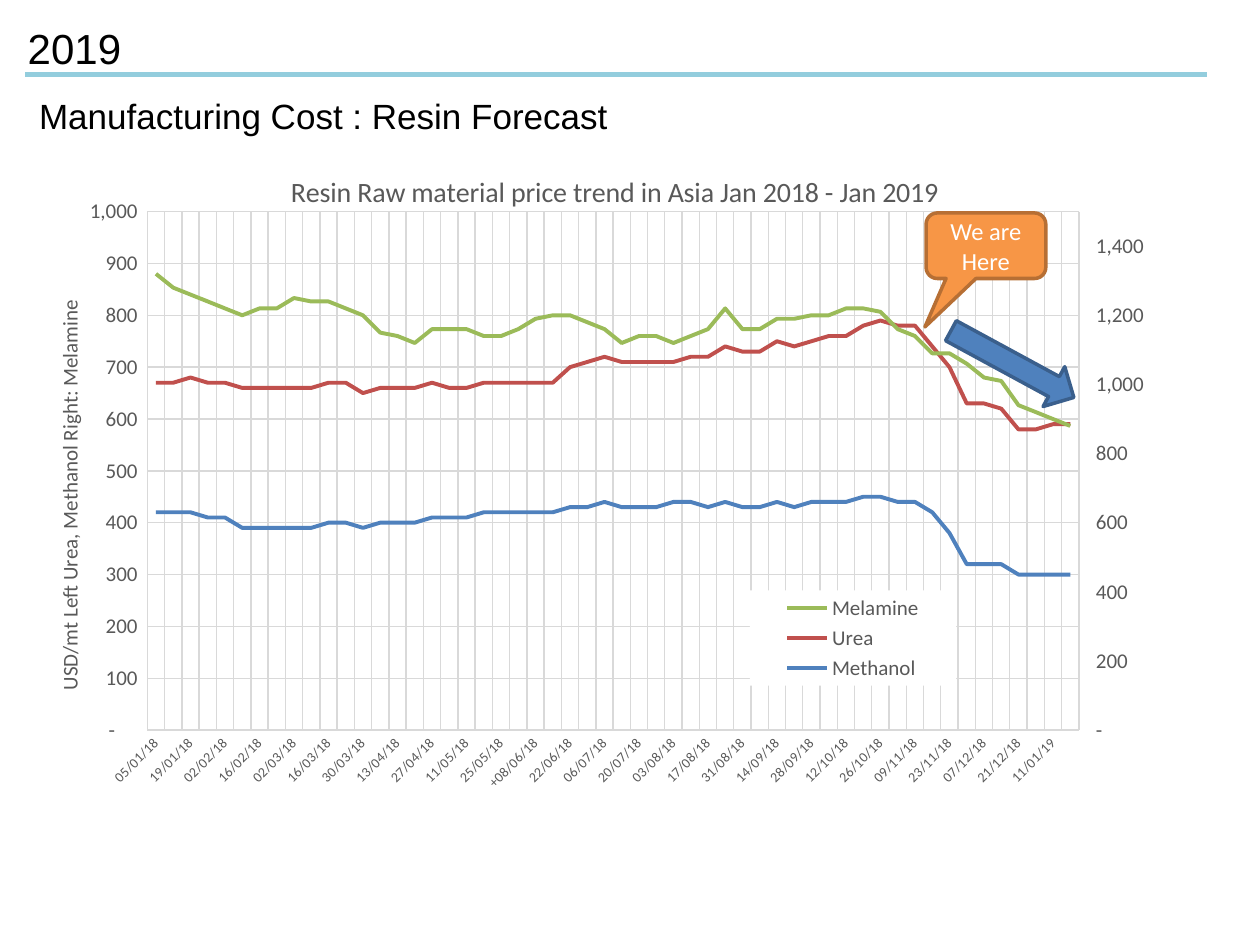
import copy
from dataclasses import dataclass

import lxml.etree
import pptx
import pptx.chart.axis
import pptx.chart.data
import pptx.dml.color
import pptx.enum.chart
import pptx.enum.shapes
import pptx.enum.text
import pptx.oxml
import pptx.oxml.ns
import pptx.util
from pptx.util import Inches

COLORS = {
    "rule": "93CDDD", "black": "000000", "white": "FFFFFF", "label": "595959",
    "grid": "D9D9D9", "blue": "4F81BD", "red": "C0504D", "green": "9BBB59",
    "arrow edge": "3A5F8C", "orange": "F79646", "callout edge": "B76F34",
}
PRICE_FORMAT = r'_(* #,##0_);_(* \(#,##0\);_(* "-"??_);_('
CHART_NS = pptx.oxml.ns.nsdecls("c", "a")
qn = pptx.oxml.ns.qn

WEEKS = """05/01/18 12/01/18 19/01/18 26/01/18 02/02/18 09/02/18 16/02/18 23/02/18 02/03/18
09/03/18 16/03/18 23/03/18 30/03/18 06/04/18 13/04/18 20/04/18 27/04/18 04/05/18 11/05/18
18/05/18 25/05/18 01/06/18 +08/06/18 15/06/18 22/06/18 29/06/18 06/07/18 13/07/18 20/07/18
27/07/18 03/08/18 10/08/18 17/08/18 24/08/18 31/08/18 07/09/18 14/09/18 21/09/18 28/09/18
05/10/18 12/10/18 19/10/18 26/10/18 02/11/18 09/11/18 16/11/18 23/11/18 30/11/18 07/12/18
14/12/18 21/12/18 04/01/19 11/01/19 18/01/19""".split()


@dataclass
class Resin:
    name: str
    color: str
    prices: list[int]


@dataclass
class Heading:
    text: str
    left: float
    top: float
    size: int


# Urea is stacked on methanol, so its prices are the amount above methanol.
RESINS = [
    Resin("Methanol", "blue", [
        420, 420, 420, 410, 410, 390, 390, 390, 390, 390, 400, 400, 390, 400, 400, 400, 410, 410,
        410, 420, 420, 420, 420, 420, 430, 430, 440, 430, 430, 430, 440, 440, 430, 440, 430, 430,
        440, 430, 440, 440, 440, 450, 450, 440, 440, 420, 380, 320, 320, 320, 300, 300, 300, 300]),
    Resin("Urea", "red", [
        250, 250, 260, 260, 260, 270, 270, 270, 270, 270, 270, 270, 260, 260, 260, 260, 260, 250,
        250, 250, 250, 250, 250, 250, 270, 280, 280, 280, 280, 280, 270, 280, 290, 300, 300, 300,
        310, 310, 310, 320, 320, 330, 340, 340, 340, 320, 320, 310, 310, 300, 280, 280, 290, 290]),
    Resin("Melamine", "green", [
        1320, 1280, 1260, 1240, 1220, 1200, 1220, 1220, 1250, 1240, 1240, 1220, 1200, 1150, 1140,
        1120, 1160, 1160, 1160, 1140, 1140, 1160, 1190, 1200, 1200, 1180, 1160, 1120, 1140, 1140,
        1120, 1140, 1160, 1220, 1160, 1160, 1190, 1190, 1200, 1200, 1220, 1220, 1210, 1160, 1140,
        1090, 1090, 1060, 1020, 1010, 940, 920, 900, 880]),
]
HEADINGS = [
    Heading("2019", 0.22, 0.11, 24),
    Heading("Manufacturing Cost : Resin Forecast", 0.31, 0.61, 20),
]


def rgb(color: str):
    return pptx.dml.color.RGBColor.from_string(COLORS[color])


def style_font(font, size: int, color: str, name: str = "Calibri") -> None:
    font.name, font.size, font.bold = name, pptx.util.Pt(size), False
    font.color.rgb = rgb(color)


def style_line(line, color: str, width: float) -> None:
    line.color.rgb = rgb(color)
    line.width = pptx.util.Pt(width)


def add_heading(slide, heading: Heading) -> None:
    box = slide.shapes.add_textbox(
        Inches(heading.left), Inches(heading.top), Inches(6.42), Inches(0.47))
    frame = box.text_frame
    frame.margin_left = frame.margin_top = frame.margin_right = frame.margin_bottom = 0
    frame.vertical_anchor = pptx.enum.text.MSO_ANCHOR.BOTTOM
    frame.word_wrap = True
    frame.text = heading.text
    style_font(frame.paragraphs[0].font, heading.size, "black", "Arial")


def add_marker(slide, kind, left, top, width, height, fill: str, edge: str):
    marker = slide.shapes.add_shape(kind, Inches(left), Inches(top), Inches(width), Inches(height))
    marker.shadow.inherit = False
    marker.fill.solid()
    marker.fill.fore_color.rgb = rgb(fill)
    style_line(marker.line, edge, 2)
    return marker


def set_layout(element, index: int, **fractions: float) -> None:
    """Place a chart part by fractions of the chart; index is the layout's child position."""
    for old in element.findall(qn("c:layout")):
        element.remove(old)
    modes = {"xMode": "edge", "yMode": "edge"}
    if element.tag == qn("c:plotArea"):
        modes = {"layoutTarget": "inner", **modes}
    settings = "".join(f'<c:{key} val="{val}"/>' for key, val in {**modes, **fractions}.items())
    element.insert(index, pptx.oxml.parse_xml(
        f"<c:layout {CHART_NS}><c:manualLayout>{settings}</c:manualLayout></c:layout>"))


def write_title(titled, text: str, size: int, x: float, y: float) -> None:
    titled.text_frame.text = text
    style_font(titled.text_frame.paragraphs[0].font, size, "label")
    set_layout(titled._element, 1, x=x, y=y)


def style_axis(axis, size: int) -> None:
    axis.major_tick_mark = axis.minor_tick_mark = pptx.enum.chart.XL_TICK_MARK.NONE
    style_font(axis.tick_labels.font, size, "label")
    axis.has_major_gridlines = True
    style_line(axis.major_gridlines.format.line, "grid", 0.75)


def move_last_series_right(chart) -> None:
    """Give the last series its own line group with a value axis on the right."""
    plot_area = chart._chartSpace.chart.plotArea
    left_group = plot_area.find(qn("c:lineChart"))
    right_group = copy.deepcopy(left_group)
    left_series = left_group.findall(qn("c:ser"))
    left_group.remove(left_series[-1])
    for series in right_group.findall(qn("c:ser"))[:-1]:
        right_group.remove(series)
    left_group.addnext(right_group)

    category = copy.deepcopy(chart.category_axis._element)
    price = copy.deepcopy(chart.value_axis._element)
    for element, own, other in ((category, "5001", "5002"), (price, "5002", "5001")):
        element.find(qn("c:axId")).set("val", own)
        element.find(qn("c:crossAx")).set("val", other)
    for reference, axis_id in zip(right_group.findall(qn("c:axId")), ("5001", "5002")):
        reference.set("val", axis_id)
    chart.value_axis._element.addnext(price)
    price.addnext(category)

    hidden_axis = pptx.chart.axis.CategoryAxis(category)
    hidden_axis.has_major_gridlines = False
    hidden_axis.visible = False
    right_axis = pptx.chart.axis.ValueAxis(price)
    right_axis.has_major_gridlines = right_axis.has_title = False
    right_axis.major_tick_mark = pptx.enum.chart.XL_TICK_MARK.OUTSIDE
    right_axis.maximum_scale, right_axis.major_unit = 1500, 200
    price.find(qn("c:axPos")).set("val", "r")
    price.find(qn("c:crosses")).set("val", "max")


def add_legend(chart) -> None:
    chart.has_legend = True
    legend = chart.legend
    legend.position = pptx.enum.chart.XL_LEGEND_POSITION.RIGHT
    legend.include_in_layout = True
    style_font(legend.font, 12, "label")
    set_layout(legend._element, 1, x=0.62, y=0.673, w=0.183, h=0.145)
    legend._element.find(qn("c:overlay")).addnext(pptx.oxml.parse_xml(
        f'<c:spPr {CHART_NS}><a:solidFill><a:srgbClr val="{COLORS["white"]}"/>'
        "</a:solidFill></c:spPr>"))


def add_price_chart(slide) -> None:
    prices = pptx.chart.data.CategoryChartData()
    prices.categories = WEEKS
    for resin in RESINS:
        prices.add_series(resin.name, resin.prices)
    chart = slide.shapes.add_chart(
        pptx.enum.chart.XL_CHART_TYPE.LINE_STACKED,
        Inches(0.41), Inches(1.18), Inches(8.94), Inches(5.21), prices).chart
    style_font(chart.font, 12, "black")
    chart.plots[0].vary_by_categories = False
    for series, resin in zip(chart.plots[0].series, RESINS):
        series.smooth = False
        style_line(series.format.line, resin.color, 2.25)

    chart.has_title = True
    write_title(chart.chart_title, "Resin Raw material price trend in Asia Jan 2018 - Jan 2019",
                16, 0.208, 0.03)
    weeks, left_axis = chart.category_axis, chart.value_axis
    style_axis(weeks, 8)
    style_line(weeks.format.line, "grid", 0.75)
    weeks._element.find(qn("c:txPr")).find(qn("a:bodyPr")).set("rot", "-2700000")
    label_skip = pptx.oxml.parse_xml(f'<c:tickLblSkip {CHART_NS} val="2"/>')
    weeks._element.find(qn("c:noMultiLvlLbl")).addprevious(label_skip)

    style_axis(left_axis, 12)
    left_axis.format.line.fill.background()
    left_axis.minimum_scale, left_axis.maximum_scale, left_axis.major_unit = 0, 1000, 100
    left_axis.tick_labels.number_format = PRICE_FORMAT
    left_axis.tick_labels.number_format_is_linked = False
    move_last_series_right(chart)
    write_title(left_axis.axis_title, "USD/mt Left Urea, Methanol Right: Melamine", 12, 0, 0.225)
    title_body = left_axis.axis_title.text_frame._txBody.find(qn("a:bodyPr"))
    title_body.set("rot", "-5400000")
    title_body.set("vert", "horz")
    set_layout(chart._chartSpace.chart.plotArea, 0, x=0.085, y=0.096, w=0.827, h=0.79)
    add_legend(chart)


def main() -> None:
    deck = pptx.Presentation()
    deck.slide_width, deck.slide_height = Inches(10), Inches(7.5)
    slide = deck.slides.add_slide(deck.slide_layouts[6])

    rule = slide.shapes.add_connector(
        pptx.enum.shapes.MSO_CONNECTOR.STRAIGHT,
        Inches(0.2), Inches(0.59), Inches(9.58), Inches(0.59))
    style_line(rule.line, "rule", 2.75)
    lxml.etree.SubElement(rule._element.spPr, qn("a:effectLst"))
    for heading in HEADINGS:
        add_heading(slide, heading)
    add_price_chart(slide)

    shapes = pptx.enum.shapes.MSO_SHAPE
    trend = add_marker(slide, shapes.RIGHT_ARROW, 7.48, 2.71, 1.11, 0.36, "blue", "arrow edge")
    trend.rotation = 28.5
    today = add_marker(slide, shapes.ROUNDED_RECTANGULAR_CALLOUT, 7.35, 1.69, 0.95, 0.52,
                       "orange", "callout edge")
    for index, adjustment in enumerate((-0.51, 1.24, 0.17)):
        today.adjustments[index] = adjustment
    today.text_frame.word_wrap = True
    today.text_frame.text = "We are Here"
    today.text_frame.vertical_anchor = pptx.enum.text.MSO_ANCHOR.MIDDLE
    today.text_frame.paragraphs[0].alignment = pptx.enum.text.PP_ALIGN.CENTER
    style_font(today.text_frame.paragraphs[0].font, 14, "white")
    deck.save("out.pptx")


if __name__ == "__main__":
    main()
